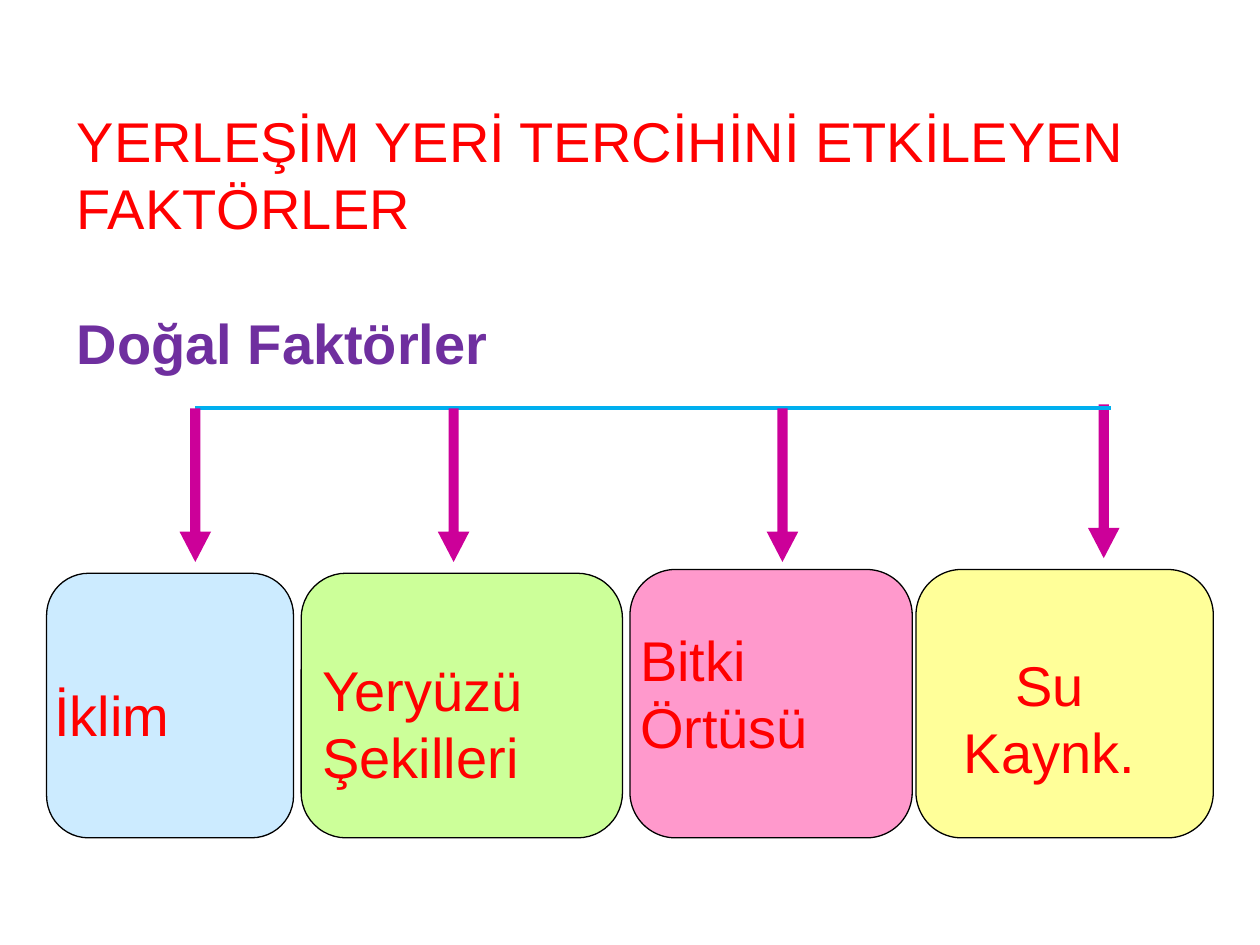
import dataclasses

import lxml.etree
import pptx
import pptx.dml.color
import pptx.enum.shapes
import pptx.enum.text
import pptx.oxml.ns
import pptx.util

Inches = pptx.util.Inches
Pt = pptx.util.Pt
RGB = pptx.dml.color.RGBColor.from_string
ALIGN = pptx.enum.text.PP_ALIGN
STRAIGHT = pptx.enum.shapes.MSO_CONNECTOR.STRAIGHT


@dataclasses.dataclass(frozen=True)
class Theme:
    font: str = "Arial"
    size: float = 32
    line_pitch: float = 38.5
    text: str = "FF0000"
    subtitle: str = "6F2F9F"
    branch: str = "00AFEF"
    arrow: str = "CC0099"
    outline: str = "000000"


THEME = Theme()

FACTORS = [
    {"box": (0.37, 4.55, 1.96, 2.1), "fill": "CCEBFF", "arrow": (1.55, 3.24),
     "label": "İklim", "label_at": (0.06, 0.85, 1.81), "align": ALIGN.LEFT},
    {"box": (2.39, 4.55, 2.55, 2.1), "fill": "CCFF99", "arrow": (3.6, 3.24),
     "label": "Yeryüzü\nŞekilleri", "label_at": (0.17, 0.65, 2), "align": ALIGN.LEFT},
    {"box": (5, 4.52, 2.24, 2.13), "fill": "FF99CC", "arrow": (6.21, 3.24),
     "label": "Bitki\nÖrtüsü", "label_at": (0.08, 0.44, 1.76), "align": ALIGN.LEFT},
    {"box": (7.27, 4.52, 2.36, 2.13), "fill": "FFFF99", "arrow": (8.76, 3.21),
     "label": "Su\nKaynk.", "label_at": (0.17, 0.64, 1.78), "align": ALIGN.CENTER},
]


def apply(target, values):
    for attribute, value in values.items():
        setattr(target, attribute, value)


def format_paragraph(paragraph, color, bold=False, align=ALIGN.LEFT, before=0):
    apply(paragraph, {"alignment": align, "line_spacing": Pt(THEME.line_pitch),
                      "space_before": Pt(before)})
    apply(paragraph.font, {"name": THEME.font, "size": Pt(THEME.size), "bold": bold})
    paragraph.font.color.rgb = RGB(color)


def format_frame(frame, left=0, top=0, right=0):
    apply(frame, {"word_wrap": True,
                  "auto_size": pptx.enum.text.MSO_AUTO_SIZE.NONE,
                  "vertical_anchor": pptx.enum.text.MSO_ANCHOR.TOP,
                  "margin_left": Inches(left), "margin_top": Inches(top),
                  "margin_right": Inches(right), "margin_bottom": 0})


def place_title(slide, left, top, width, height):
    title = slide.shapes.title
    apply(title, {"left": Inches(left), "top": Inches(top),
                  "width": Inches(width), "height": Inches(height)})
    frame = title.text_frame
    frame.text = "YERLEŞİM YERİ TERCİHİNİ ETKİLEYEN FAKTÖRLER\nDoğal Faktörler"
    format_frame(frame, left=0.1, top=0.59, right=0.1)
    heading, subtitle = frame.paragraphs
    format_paragraph(heading, THEME.text)
    format_paragraph(subtitle, THEME.subtitle, bold=True, before=THEME.line_pitch)


def fill_shape(shape, color):
    shape.shadow.inherit = False
    shape.fill.solid()
    shape.fill.fore_color.rgb = RGB(color)


def arrow_outline(x, top):
    shaft, head, neck, tip = 0.04, 0.125, top + 0.98, top + 1.22
    corners = [(-shaft, top), (shaft, top), (shaft, neck), (head, neck),
               (0, tip), (-head, neck), (-shaft, neck)]
    return [(Inches(x + dx), Inches(y)) for dx, y in corners]


def draw_arrows(slide, factors):
    outlines = [arrow_outline(*factor["arrow"]) for factor in factors]
    builder = slide.shapes.build_freeform(*outlines[0][0])
    for start, *corners in outlines:
        builder.move_to(*start)
        builder.add_line_segments(corners, close=True)
    arrows = builder.convert_to_shape()
    fill_shape(arrows, THEME.arrow)
    arrows.line.fill.background()


def place_branches(slide, left, right, y):
    draw_arrows(slide, FACTORS[3:])
    branch = slide.shapes.add_connector(STRAIGHT, *map(Inches, (left, y, right, y)))
    branch.line.color.rgb = RGB(THEME.branch)
    branch.line.width = Pt(2)
    lxml.etree.SubElement(branch._element.spPr, pptx.oxml.ns.qn("a:effectLst"))
    draw_arrows(slide, FACTORS[:3])


def place_factor(slide, factor):
    left, top, width, height = factor["box"]
    card = slide.shapes.add_shape(
        pptx.enum.shapes.MSO_SHAPE.ROUNDED_RECTANGLE, *map(Inches, factor["box"]))
    fill_shape(card, factor["fill"])
    card.adjustments[0] = 0.17
    card.line.color.rgb = RGB(THEME.outline)
    card.line.width = Pt(0.75)

    dx, dy, label_width = factor["label_at"]
    label = slide.shapes.add_textbox(Inches(left + dx), Inches(top + dy),
                                     Inches(label_width), Inches(1.1))
    label.text_frame.text = factor["label"]
    format_frame(label.text_frame)
    for paragraph in label.text_frame.paragraphs:
        format_paragraph(paragraph, THEME.text, align=factor["align"])


def main():
    deck = pptx.Presentation()
    apply(deck, {"slide_width": Inches(10), "slide_height": Inches(7.5)})
    slide = deck.slides.add_slide(deck.slide_layouts.get_by_name("Title Only"))
    place_title(slide, 0.51, 0.25, 9.13, 2.79)
    place_branches(slide, 1.55, 8.82, 3.24)
    for factor in FACTORS:
        place_factor(slide, factor)
    deck.save("out.pptx")


if __name__ == "__main__":
    main()
